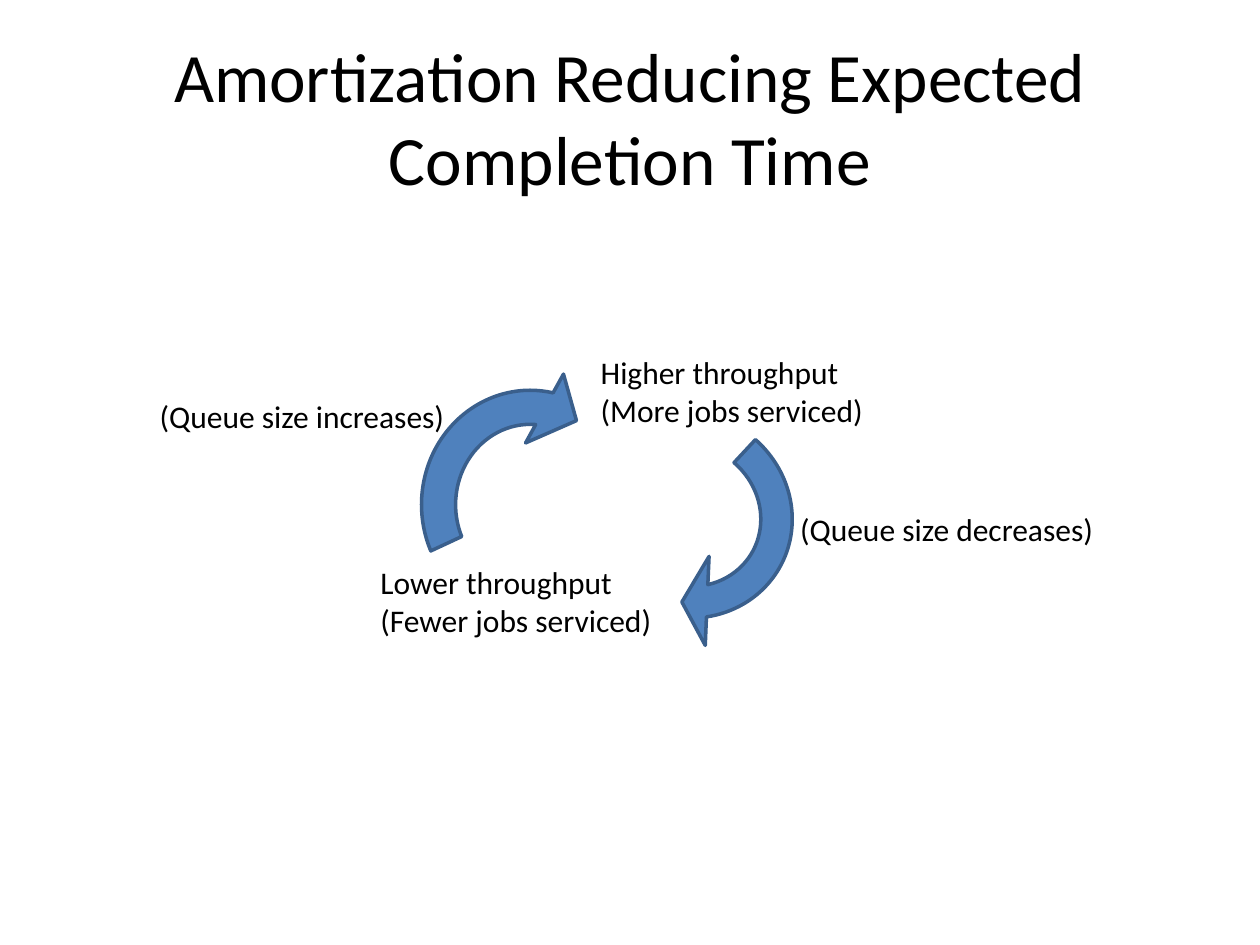
from pptx import Presentation
from pptx.dml.color import RGBColor
from pptx.enum.shapes import MSO_SHAPE as SHAPE
from pptx.enum.text import MSO_ANCHOR as ANCHOR, PP_ALIGN as ALIGN
from pptx.util import Cm, Pt

# Content: places are left, top, width, height in cm
TITLE = ("Amortization Reducing Expected Completion Time", (1.27, 0.76, 22.86, 3.18))
ARROW_SIZE = (5.28, 5.51)
ARROWS = [  # left, top, rotation, adjustments
    (8.05, 7.42, 0, (0.13, 12.21, 167.08, 93.03, 0.15)),
    (11.18, 7.62, 118.1, (0.12, 9.88, 190.74, 116.9, 0.17)),
]
LABELS = [  # left, top, width, lines
    (11.86, 6.99, 6.55, ["Higher throughput", "(More jobs serviced)"]),
    (7.42, 11.23, 6.45, ["Lower throughput", "(Fewer jobs serviced)"]),
    (2.97, 7.87, 6.45, ["(Queue size increases)"]),
    (15.88, 10.16, 6.55, ["(Queue size decreases)"]),
]
LABEL_PAD, LINE_HEIGHT = 0.25, 0.78
TITLE_FONT = {"name": "Calibri", "size": Pt(39.6)}
LABEL_FONT = {"name": "Calibri", "size": Pt(18)}
BLACK, BLUE, DARK_BLUE = "000000", "4F81BD", "3A5F8C"


def rgb(color):
    return RGBColor.from_string(color)


def add_text(shapes, place, lines, font, align=ALIGN.LEFT, anchor=ANCHOR.TOP):
    tf = shapes.add_textbox(*map(Cm, place)).text_frame
    tf.word_wrap = True
    tf.vertical_anchor = anchor
    for i, line in enumerate(lines):
        p = tf.add_paragraph() if i else tf.paragraphs[0]
        p.alignment = align
        r = p.add_run()
        r.text = line
        for key, value in font.items():
            setattr(r.font, key, value)
        r.font.color.rgb = rgb(BLACK)


def add_arrow(shapes, left, top, rotation, adjustments):
    s = shapes.add_shape(SHAPE.CIRCULAR_ARROW, *map(Cm, (left, top, *ARROW_SIZE)))
    s.rotation = rotation
    for i, value in enumerate(adjustments):
        s.adjustments[i] = value
    s.shadow.inherit = False
    s.fill.solid()
    s.fill.fore_color.rgb = rgb(BLUE)
    s.line.color.rgb = rgb(DARK_BLUE)
    s.line.width = Pt(2)


prs = Presentation()
prs.slide_width, prs.slide_height = Cm(25.4), Cm(19.05)
slide = prs.slides.add_slide(prs.slide_layouts[6])

# Title
text, place = TITLE
add_text(slide.shapes, place, [text], TITLE_FONT, ALIGN.CENTER, ANCHOR.MIDDLE)

# Throughput cycle: arrows, then labels
cycle = slide.shapes.add_group_shape().shapes
for arrow in ARROWS:
    add_arrow(cycle, *arrow)
for left, top, width, lines in LABELS:
    height = LABEL_PAD + LINE_HEIGHT * len(lines)
    add_text(cycle, (left, top, width, height), lines, LABEL_FONT)

prs.save("out.pptx")
